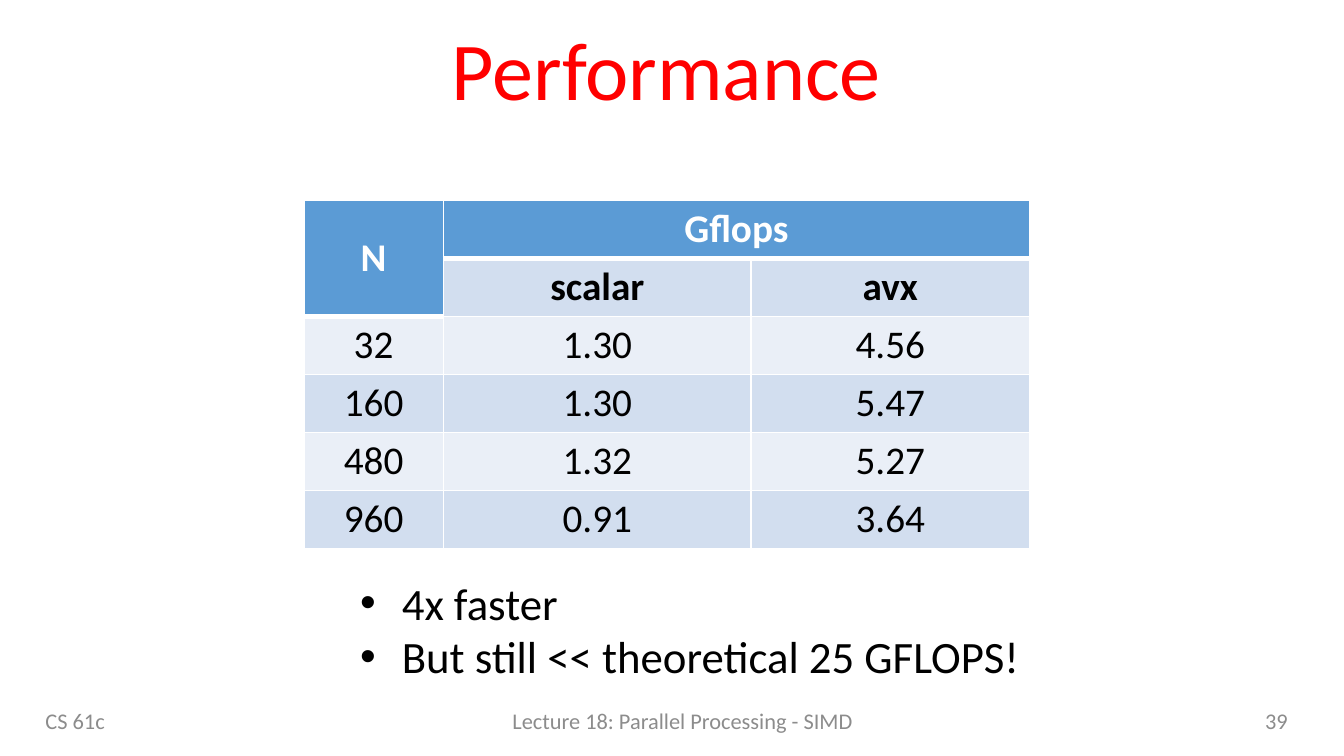
import pptx
import pptx.dml.color
import pptx.enum.text
import pptx.oxml
import pptx.oxml.ns
import pptx.util

Inches = pptx.util.Inches
Pt = pptx.util.Pt
ALIGN = pptx.enum.text.PP_ALIGN
ANCHOR = pptx.enum.text.MSO_ANCHOR

HEADING = "Performance"
RESULTS = [
    ("N", "Gflops", None),
    (None, "scalar", "avx"),
    ("32", "1.30", "4.56"),
    ("160", "1.30", "5.47"),
    ("480", "1.32", "5.27"),
    ("960", "0.91", "3.64"),
]
HEADER_CELLS = {(0, 0), (0, 1), (0, 2), (1, 0)}
MERGES = [((0, 0), (1, 0)), ((0, 1), (0, 2))]
TAKEAWAYS = ["4x faster", "But still << theoretical 25 GFLOPS!"]
FOOTERS = [
    ("CS 61c", 0.24, 2.46, ALIGN.LEFT),
    ("Lecture 18: Parallel Processing - SIMD", 2.92, 4.32, ALIGN.CENTER),
    ("39", 7.43, 2.25, ALIGN.RIGHT),
]
SLIDE_WIDTH = 10
SLIDE_HEIGHT = SLIDE_WIDTH * 9 / 16
COLUMN_WIDTHS = [1.04, 2.29, 2.07]
TABLE_HEIGHT = 2.55
ROW_HEIGHT = TABLE_HEIGHT / len(RESULTS)
CELL_MARGIN = 0.05 * 0.75

THEME = {
    "font": "Calibri",
    "title": "FF0000", "text": "000000", "footer": "8C8C8C", "white": "FFFFFF",
    "header": "5B9BD5", "bands": ("EAEFF7", "D2DEEF"),
    "title_size": 44, "table_size": 21, "list_size": 24, "footer_size": 12,
    "rule": 1, "heavy_rule": 3,
}


def rgb(name):
    return pptx.dml.color.RGBColor.from_string(name)


def write(frame, lines, size, color, align=ALIGN.LEFT, bold=False,
          anchor=ANCHOR.TOP, spacing=1.0, bullet=None, wrap=True):
    frame.word_wrap = wrap
    frame.auto_size = pptx.enum.text.MSO_AUTO_SIZE.NONE
    frame.vertical_anchor = anchor
    for index, line in enumerate(lines):
        paragraph = frame.paragraphs[0] if index == 0 else frame.add_paragraph()
        paragraph.alignment = align
        paragraph.line_spacing = spacing
        paragraph.space_before = paragraph.space_after = Pt(0)
        run = paragraph.add_run()
        run.text = line
        run.font.name = THEME["font"]
        run.font.size = Pt(size)
        run.font.bold = bold
        run.font.color.rgb = rgb(color)
        if bullet:
            properties = paragraph._p.get_or_add_pPr()
            properties.set("marL", str(Inches(0.31)))
            properties.set("indent", str(-Inches(0.31)))
            namespace = pptx.oxml.ns.nsdecls("a")
            properties.append(pptx.oxml.parse_xml(f'<a:buFont {namespace} typeface="Arial"/>'))
            properties.append(pptx.oxml.parse_xml(f'<a:buChar {namespace} char="{bullet}"/>'))


def place(shape, left, top, width, height):
    shape.left, shape.top = Inches(left), Inches(top)
    shape.width, shape.height = Inches(width), Inches(height)


def rule_cell(cell, top, bottom):
    widths = {"lnL": THEME["rule"], "lnR": THEME["rule"], "lnT": top, "lnB": bottom}
    for position, (side, width) in enumerate(widths.items()):
        border = pptx.oxml.parse_xml(
            f'<a:{side} {pptx.oxml.ns.nsdecls("a")} w="{Pt(width)}"><a:solidFill>'
            f'<a:srgbClr val="{THEME["white"]}"/></a:solidFill></a:{side}>')
        cell._tc.get_or_add_tcPr().insert(position, border)


def rule_width(row, column):
    return THEME["heavy_rule"] if (row, column) in HEADER_CELLS else THEME["rule"]


def add_results(slide):
    table = slide.shapes.add_table(
        len(RESULTS), len(COLUMN_WIDTHS), Inches(2.26), Inches(1.49),
        Inches(sum(COLUMN_WIDTHS)), Inches(TABLE_HEIGHT)).table
    for column, width in zip(table.columns, COLUMN_WIDTHS):
        column.width = Inches(width)
    for row, values in enumerate(RESULTS):
        table.rows[row].height = Inches(ROW_HEIGHT)
        for column, value in enumerate(values):
            cell = table.cell(row, column)
            header = (row, column) in HEADER_CELLS
            cell.margin_top = cell.margin_bottom = Inches(CELL_MARGIN)
            cell.fill.solid()
            cell.fill.fore_color.rgb = rgb(THEME["header"] if header else THEME["bands"][row % 2])
            rule_cell(cell, rule_width(row - 1, column), rule_width(row, column))
            if value:
                write(cell.text_frame, [value], THEME["table_size"],
                      THEME["white"] if header else THEME["text"],
                      align=ALIGN.CENTER, bold=row < 2)
    for start, end in MERGES:
        table.cell(*start).merge(table.cell(*end))
    table.cell(0, 0).vertical_anchor = ANCHOR.MIDDLE


def main():
    deck = pptx.Presentation()
    deck.slide_width, deck.slide_height = Inches(SLIDE_WIDTH), Inches(SLIDE_HEIGHT)
    slide = deck.slides.add_slide(deck.slide_layouts[1])

    title, takeaways = slide.placeholders
    place(title, 0.24, 0.12, 9.44, 0.86)
    write(title.text_frame, [HEADING], THEME["title_size"], THEME["title"],
          align=ALIGN.CENTER, anchor=ANCHOR.MIDDLE, spacing=0.9)

    add_results(slide)

    for label, left, width, align in FOOTERS:
        footer = slide.shapes.add_textbox(Inches(left), Inches(5.21), Inches(width), Inches(0.3))
        write(footer.text_frame, [label], THEME["footer_size"], THEME["footer"],
              align=align, anchor=ANCHOR.MIDDLE)

    place(takeaways, 2.58, 4.23, 5.15, 0.91)
    write(takeaways.text_frame, TAKEAWAYS, THEME["list_size"], THEME["text"],
          bullet="•", wrap=False)

    deck.save("out.pptx")


if __name__ == "__main__":
    main()
